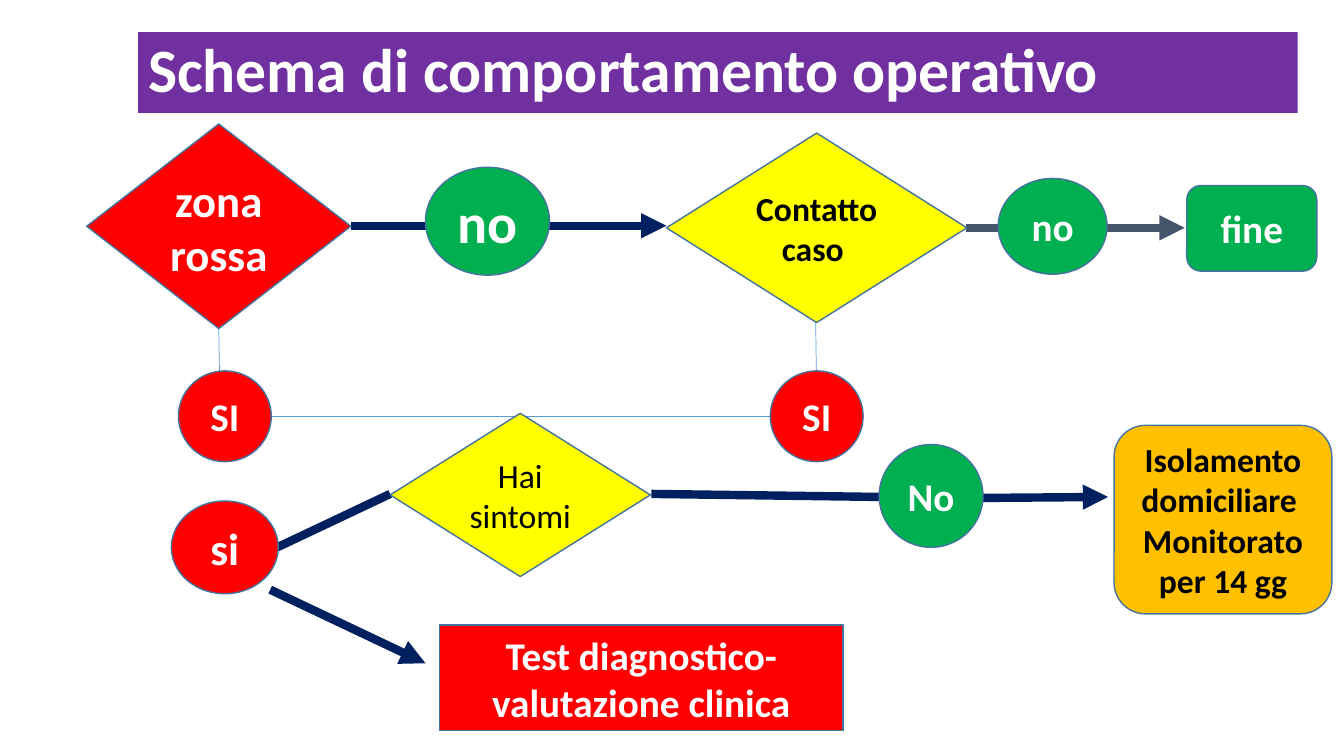
from pptx import Presentation
from pptx.dml.color import RGBColor
from pptx.enum.shapes import MSO_CONNECTOR, MSO_SHAPE
from pptx.enum.text import MSO_ANCHOR, PP_ALIGN
from pptx.oxml.ns import qn
from pptx.util import Inches, Pt
from lxml import etree

RECT = MSO_SHAPE.RECTANGLE
ROUND = MSO_SHAPE.ROUNDED_RECTANGLE
OVAL = MSO_SHAPE.OVAL
RHOMB = MSO_SHAPE.DIAMOND
STRAIGHT = MSO_CONNECTOR.STRAIGHT
MIDDLE = MSO_ANCHOR.MIDDLE
LEFT, CENTER = PP_ALIGN.LEFT, PP_ALIGN.CENTER

WHITE, BLACK = "FFFFFF", "000000"
RED, GREEN, YELLOW, AMBER = "FF0000", "00B050", "FFFF00", "FFC000"
PURPLE, NAVY, SLATE, BLUE, EDGE = "7030A0", "002060", "44546A", "5B9BD5", "43739E"


def color(code):
    return RGBColor.from_string(code)


def add_box(kind, place, fill, text, size, ink=WHITE, bold=True, align=CENTER):
    box = slide.shapes.add_shape(kind, *[Inches(v) for v in place])
    box.shadow.inherit = False
    box.fill.solid()
    box.fill.fore_color.rgb = color(fill)
    box.line.color.rgb = color(EDGE)
    box.line.width = Pt(1)
    frame = box.text_frame
    frame.word_wrap = True
    frame.vertical_anchor = MIDDLE
    frame.text = text
    for para in frame.paragraphs:
        para.alignment = align
        for run in para.runs:
            run.font.name = "Calibri"
            run.font.size = Pt(size)
            run.font.bold = bold
            run.font.color.rgb = color(ink)
    return box


deck = Presentation()
deck.slide_width = Inches(13.33)
deck.slide_height = Inches(7.5)
slide = deck.slides.add_slide(deck.slide_layouts[6])

title = add_box(RECT, (1.37, 0.32, 11.5, 0.8), PURPLE,
                "Schema di comportamento operativo", 44, align=LEFT)
title.line.fill.background()
title.text_frame.paragraphs[0].line_spacing = 0.9

links = [
    (2.17, 3.26, 2.18, 3.86, BLUE, 0.5, False),
    (8.09, 3.2, 8.1, 3.93, BLUE, 0.5, False),
    (2.68, 4.13, 7.64, 4.13, BLUE, 0.5, False),
    (3.48, 2.24, 6.61, 2.24, NAVY, 6, True),
    (9.58, 2.26, 11.75, 2.26, SLATE, 6, True),
    (6.46, 4.9, 8.72, 4.93, NAVY, 6, False),
    (9.74, 4.94, 10.99, 4.93, NAVY, 6, True),
    (3.87, 4.9, 2.75, 5.43, NAVY, 6, False),
    (2.68, 5.85, 4.22, 6.58, NAVY, 6, True),
]
for x1, y1, x2, y2, ink, width, arrow in links:
    link = slide.shapes.add_connector(
        STRAIGHT, Inches(x1), Inches(y1), Inches(x2), Inches(y2))
    link.line.color.rgb = color(ink)
    link.line.width = Pt(width)
    if arrow:
        etree.SubElement(link.line._get_or_add_ln(), qn("a:tailEnd"), type="triangle")
    etree.SubElement(link._element.spPr, qn("a:effectLst"))

add_box(RHOMB, (0.86, 1.23, 2.62, 2.03), RED, "zona rossa", 32)
add_box(RHOMB, (6.61, 1.32, 2.98, 1.88), YELLOW, "Contatto caso ", 24, BLACK)
add_box(RHOMB, (3.87, 4.1, 2.58, 1.62), YELLOW, "Hai sintomi", 24, BLACK, False)

for left in (1.77, 7.64):
    add_box(OVAL, (left, 3.68, 0.92, 0.9), RED, "SI", 28)
add_box(OVAL, (1.7, 4.97, 1.06, 0.92), RED, "si", 32)
add_box(OVAL, (4.22, 1.66, 1.23, 1.07), GREEN, "no", 40)
add_box(OVAL, (9.9, 1.77, 1.08, 0.95), GREEN, "no", 28)
add_box(OVAL, (8.72, 4.41, 1.03, 1.02), GREEN, "No ", 28)

add_box(ROUND, (11.77, 1.84, 1.29, 0.85), GREEN, "fine", 28)
add_box(ROUND, (11.05, 4.22, 2.16, 1.87), AMBER,
        "Isolamento domiciliare \nMonitorato per 14 gg", 24, BLACK)
add_box(RECT, (4.36, 6.2, 4, 1.05), RED,
        "Test diagnostico-\n valutazione clinica ", 28)

deck.save("out.pptx")
